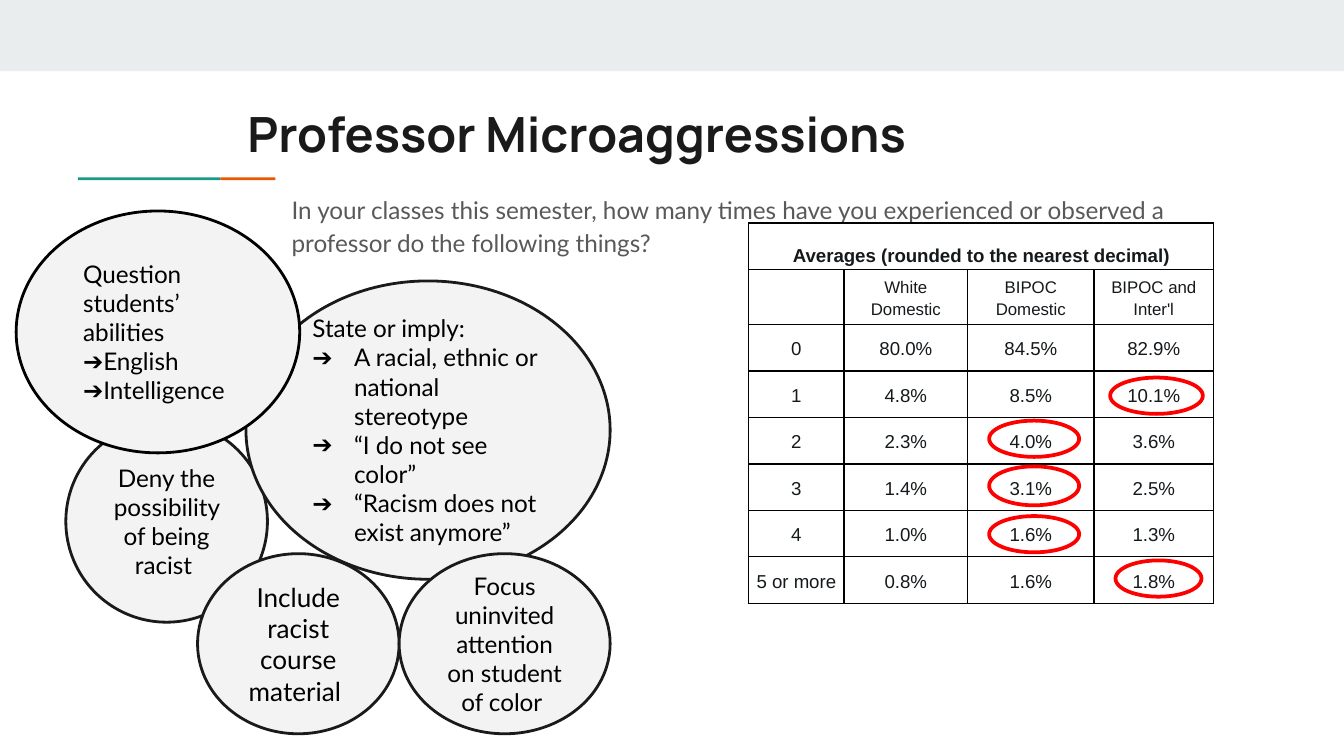
from lxml import etree
from pptx import Presentation
from pptx.dml.color import RGBColor
from pptx.enum.shapes import MSO_SHAPE
from pptx.enum.text import MSO_ANCHOR, MSO_AUTO_SIZE, PP_ALIGN
from pptx.oxml.ns import qn
from pptx.util import Inches, Pt

OVAL, RECTANGLE = MSO_SHAPE.OVAL, MSO_SHAPE.RECTANGLE
LEFT, CENTER = PP_ALIGN.LEFT, PP_ALIGN.CENTER
TOP, MIDDLE, BOTTOM = MSO_ANCHOR.TOP, MSO_ANCHOR.MIDDLE, MSO_ANCHOR.BOTTOM

PAGE_WIDTH = 10
PAGE_HEIGHT = PAGE_WIDTH * 9 / 16

COLORS = {
    "band": "E9EDEE", "orange": "EB5600", "teal": "1A9988", "ink": "1A1A1A",
    "gray": "595959", "table_text": "15191B", "bubble": "F3F3F3",
    "black": "000000", "red": "FF0000",
}

TITLE = "Professor Microaggressions"
QUESTION = ("In your classes this semester, how many times have you experienced "
            "or observed a professor do the following things?")

BARS = [  # left, top, width, height, color
    (0, 0, PAGE_WIDTH, 0.53, "band"),
    (0.58, 1.32, 1.06, 0.02, "teal"),
    (1.64, 1.32, 0.41, 0.02, "orange"),
]

TABLE_TITLE = "Averages (rounded to the nearest decimal)"
TABLE_ROWS = [
    ("", "White Domestic", "BIPOC Domestic", "BIPOC and Inter'l"),
    ("0", "80.0%", "84.5%", "82.9%"),
    ("1", "4.8%", "8.5%", "10.1%"),
    ("2", "2.3%", "4.0%", "3.6%"),
    ("3", "1.4%", "3.1%", "2.5%"),
    ("4", "1.0%", "1.6%", "1.3%"),
    ("5 or more", "0.8%", "1.6%", "1.8%"),
]
TABLE_BOX = (5.57, 1.66, 3.46, 2.83)
COLUMN_WIDTHS = [0.71, 0.92, 0.94, 0.89]
GROUP_ROW_HEIGHT = 0.41

BUBBLES = [
    {"box": (0.49, 3.13, 1.5, 1.5), "text": "Deny the possibility of being racist "},
    {"box": (1.83, 2.09, 2.71, 2.22), "text": "State or imply:",
     "items": ["A racial, ethnic or national stereotype", "“I do not see color”",
               "“Racism does not exist anymore”"],
     "indent": (0.31, -0.34)},
    {"box": (0.12, 1.57, 2.11, 1.8), "text": "Question students’ abilities",
     "items": ["English", "Intelligence"],
     "indent": (0.12, -0.28), "line": "black", "left_inset": 0.19},
    {"box": (1.47, 4.12, 1.5, 1.34), "text": "Include racist course material ", "size": 14},
    {"box": (2.97, 4.12, 1.57, 1.34),
     "text": "Focus uninvited attention on student of color "},
]

RINGS = [
    (8.26, 2.81, 0.69, 0.27),
    (7.36, 3.13, 0.67, 0.27),
    (7.36, 3.47, 0.67, 0.29),
    (7.36, 3.84, 0.67, 0.27),
    (8.3, 4.17, 0.64, 0.27),
]


def rgb(name):
    return RGBColor.from_string(COLORS[name])


def inches(box):
    return [Inches(value) for value in box]


def write(para, text, size, color, font="Lato", bold=False, align=LEFT):
    para.alignment = align
    span = para.add_run()
    span.text = text
    span.font.size, span.font.name, span.font.bold = Pt(size), font, bold
    span.font.color.rgb = rgb(color)


def set_frame(frame, anchor, left_inset=0.1):
    frame.word_wrap = True
    frame.auto_size = MSO_AUTO_SIZE.NONE
    frame.vertical_anchor = anchor
    frame.margin_left = Inches(left_inset)
    frame.margin_right = frame.margin_top = frame.margin_bottom = Inches(0.1)


def set_bullet(para, margin, indent, char=None):
    """Set the hanging indent, with an arrow bullet or with none."""
    props = para._p.get_or_add_pPr()
    props.set("marL", str(Inches(margin)))
    props.set("indent", str(Inches(indent)))
    if char is None:
        etree.SubElement(props, qn("a:buNone"))
        return
    color = etree.SubElement(props, qn("a:buClr"))
    etree.SubElement(color, qn("a:srgbClr"), val=COLORS["black"])
    etree.SubElement(props, qn("a:buFont"), typeface="Lato")
    etree.SubElement(props, qn("a:buChar"), char=char)


def add_shape(page, kind, box, fill=None, line=None, width=1.5):
    shape = page.shapes.add_shape(kind, *inches(box))
    shape.shadow.inherit = False
    if fill:
        shape.fill.solid()
        shape.fill.fore_color.rgb = rgb(fill)
    else:
        shape.fill.background()
    if line:
        shape.line.color.rgb = rgb(line)
        shape.line.width = Pt(width)
    else:
        shape.line.fill.background()
    return shape


def fill_placeholder(shape, box, text, **style):
    shape.left, shape.top, shape.width, shape.height = inches(box)
    set_frame(shape.text_frame, TOP)
    para = shape.text_frame.paragraphs[0]
    para.space_before = Pt(0)
    write(para, text, **style)
    return para


def add_bubble(page, bubble):
    shape = add_shape(page, OVAL, bubble["box"], "bubble", bubble.get("line", "ink"))
    frame = shape.text_frame
    set_frame(frame, MIDDLE, bubble.get("left_inset", 0.1))
    items = bubble.get("items", [])
    size = bubble.get("size", 13)
    write(frame.paragraphs[0], bubble["text"], size, "black",
          align=LEFT if items else CENTER)
    for item in items:
        para = frame.add_paragraph()
        write(para, item, size, "black")
        set_bullet(para, *bubble["indent"], char="➔")


def set_cell(cell, text, size, bold=False, anchor=MIDDLE):
    cell.fill.background()
    cell.vertical_anchor = anchor
    cell.margin_left = cell.margin_right = Inches(0.03)
    cell.margin_top = cell.margin_bottom = Inches(0.02)
    if text:
        para = cell.text_frame.paragraphs[0]
        para.line_spacing = 1.15
        write(para, text, size, "table_text", "Arial", bold, CENTER)
    props = cell._tc.get_or_add_tcPr()
    for position, side in enumerate(("lnL", "lnR", "lnT", "lnB")):
        border = etree.Element(qn(f"a:{side}"), w=str(Pt(0.75)))
        fill = etree.SubElement(border, qn("a:solidFill"))
        etree.SubElement(fill, qn("a:srgbClr"), val=COLORS["black"])
        props.insert(position, border)


def add_averages(page):
    rows = [(TABLE_TITLE, "", "", "")] + TABLE_ROWS
    table = page.shapes.add_table(len(rows), len(COLUMN_WIDTHS), *inches(TABLE_BOX)).table
    table.first_row = table.horz_banding = False
    for column, width in zip(table.columns, COLUMN_WIDTHS):
        column.width = Inches(width)
    row_height = (TABLE_BOX[3] - GROUP_ROW_HEIGHT) / (len(rows) - 1)
    for r, values in enumerate(rows):
        table.rows[r].height = Inches(GROUP_ROW_HEIGHT if r == 1 else row_height)
        for c, value in enumerate(values):
            set_cell(table.cell(r, c), value, size=9 if r == 1 else 10,
                     bold=r == 0, anchor=BOTTOM if r == 0 else MIDDLE)
    table.cell(0, 0).merge(table.cell(0, len(COLUMN_WIDTHS) - 1))


def main():
    deck = Presentation()
    deck.slide_width, deck.slide_height = Inches(PAGE_WIDTH), Inches(PAGE_HEIGHT)
    page = deck.slides.add_slide(deck.slide_layouts[1])
    for *box, color in BARS:
        add_shape(page, RECTANGLE, box, color)
    fill_placeholder(page.shapes.title, (1.74, 0.67, 5.23, 0.59), TITLE,
                     size=26, color="ink", font="Manrope", bold=True)
    question = fill_placeholder(page.placeholders[1], (2.07, 1.32, 6.82, 0.79),
                                QUESTION, size=13, color="gray")
    question.line_spacing = 1.15
    question.space_after = Pt(16)
    set_bullet(question, 0, 0)
    add_averages(page)
    for bubble in BUBBLES:
        add_bubble(page, bubble)
    for box in RINGS:
        add_shape(page, OVAL, box, line="red", width=2)
    deck.save("out.pptx")


if __name__ == "__main__":
    main()
